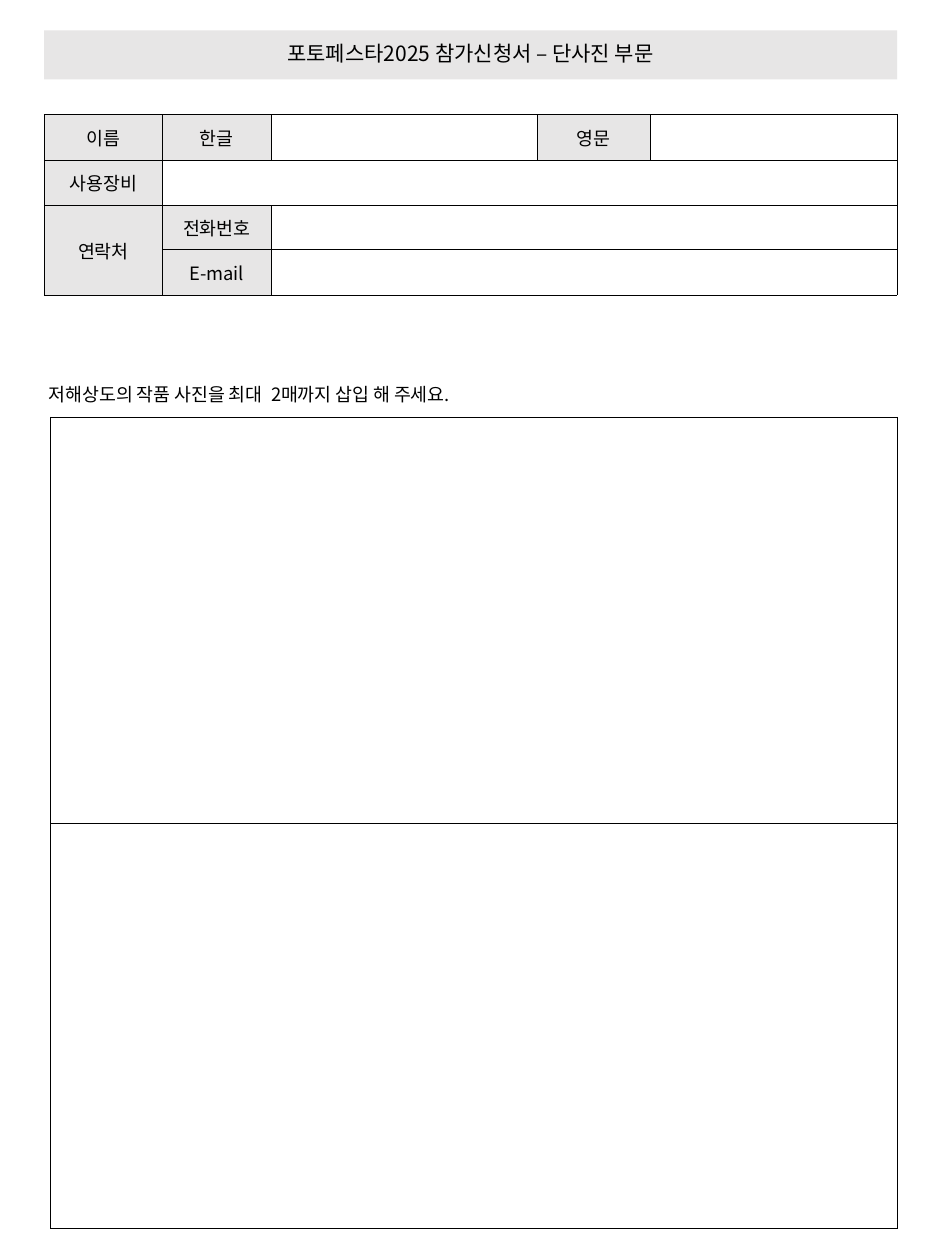
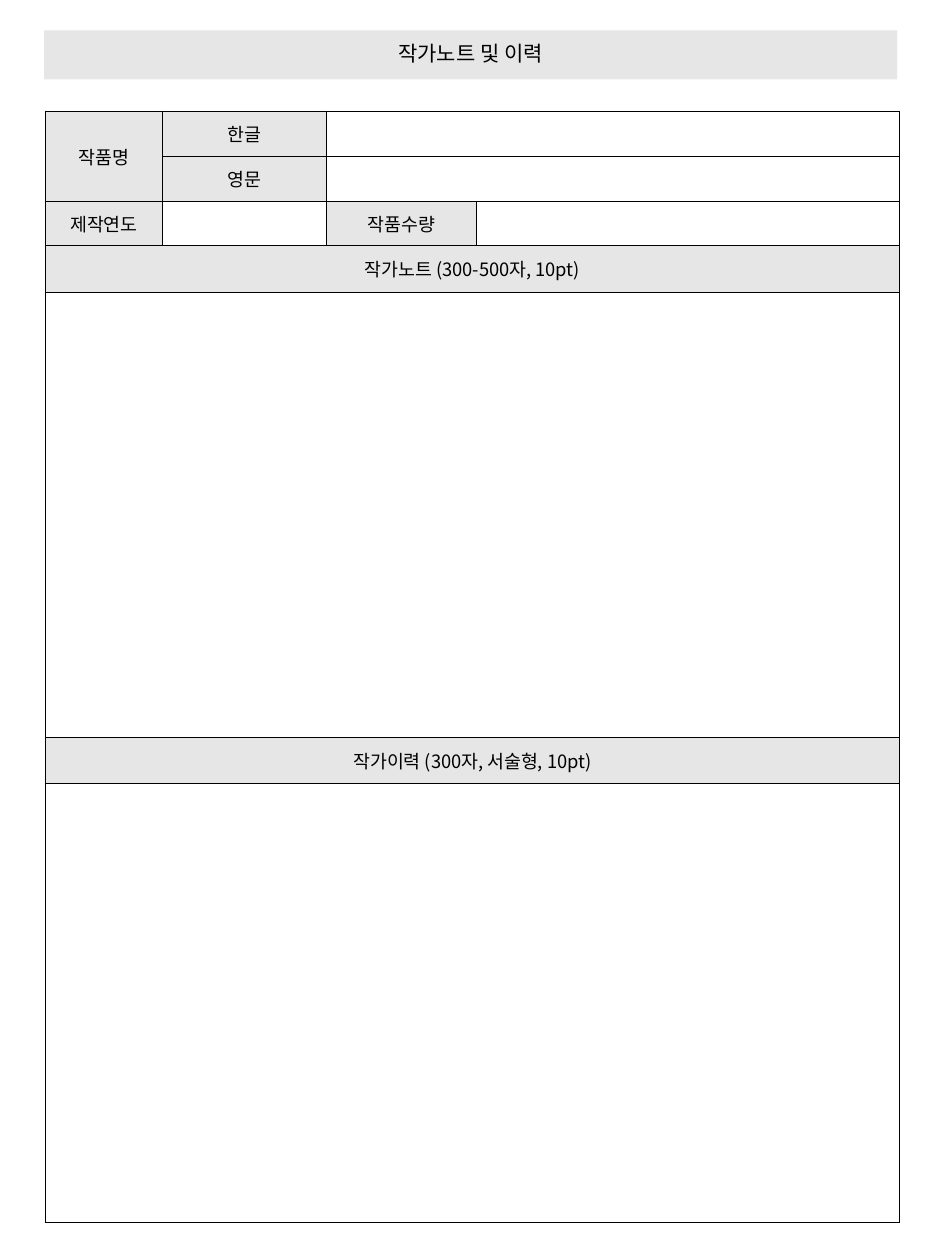
from lxml.etree import SubElement
from pptx import Presentation
from pptx.dml.color import RGBColor
from pptx.enum.text import MSO_ANCHOR, MSO_AUTO_SIZE, PP_ALIGN
from pptx.oxml.ns import qn
from pptx.util import Inches, Pt

FONT = "Noto Sans CJK KR"
BLACK = RGBColor(0x00, 0x00, 0x00)
LABEL_GRAY = RGBColor(0xE7, 0xE6, 0xE6)
TEXT_SIZE, TITLE_SIZE, BORDER_WIDTH = 10.5, 12, 0.25

APPLICANT = {
    "position": (0.35, 0.91),
    "columns": (0.94, 0.86, 2.11, 0.9, 1.96),
    "rows": (0.36, 0.36, 0.35, 0.36),
    "labels": {(0, 0): "이름", (0, 1): "한글", (0, 3): "영문", (1, 0): "사용장비",
               (2, 0): "연락처", (2, 1): "전화번호", (3, 1): "E-mail"},
    "merges": [((1, 1), (1, 4)), ((2, 0), (3, 0)), ((2, 2), (2, 4)), ((3, 2), (3, 4))],
}
PHOTOS = {
    "position": (0.4, 3.31),
    "columns": (6.72,),
    "rows": (3.22, 3.22),
    "labels": {},
    "merges": [],
}
ARTIST = {
    "position": (0.36, 0.88),
    "columns": (0.93, 1.3, 1.19, 3.36),
    "rows": (0.36, 0.36, 0.35, 0.37, 3.53, 0.37, 3.48),
    "labels": {(0, 0): "작품명", (0, 1): "한글", (1, 1): "영문",
               (2, 0): "제작연도", (2, 2): "작품수량",
               (3, 0): "작가노트 (300-500자, 10pt)",
               (5, 0): "작가이력 (300자, 서술형, 10pt)"},
    "merges": [((0, 0), (1, 0)), ((0, 2), (0, 3)), ((1, 2), (1, 3))]
              + [((row, 0), (row, 3)) for row in range(3, 7)],
}
PHOTO_NOTE = "저해상도의 작품 사진을 최대  2매까지 삽입 해 주세요."
SLIDES = [
    ("포토페스타2025 참가신청서 – 단사진 부문", [PHOTOS, APPLICANT], PHOTO_NOTE),
    ("작가노트 및 이력", [ARTIST], None),
]


def write_text(frame, text, size=TEXT_SIZE, align=PP_ALIGN.CENTER, spacing=None):
    """Write one formatted line into a text frame."""
    paragraph = frame.paragraphs[0]
    paragraph.alignment = align
    paragraph.line_spacing = spacing
    run = paragraph.add_run()
    run.text = text
    run.font.size = Pt(size)
    run.font.name = FONT
    run.font.color.rgb = BLACK
    SubElement(run.font._element, qn("a:ea"), typeface=FONT)


def add_title(slide, text):
    """Turn the title placeholder into the gray heading band."""
    title = slide.shapes.title
    title.left, title.top = Inches(0.35), Inches(0.24)
    title.width, title.height = Inches(6.77), Inches(0.39)
    title.fill.solid()
    title.fill.fore_color.rgb = LABEL_GRAY
    frame = title.text_frame
    frame.auto_size = MSO_AUTO_SIZE.NONE
    frame.vertical_anchor = MSO_ANCHOR.MIDDLE
    write_text(frame, text, size=TITLE_SIZE, spacing=0.9)


def add_note(slide, text):
    """Add the instruction line above the photo frames."""
    box = slide.shapes.add_textbox(Inches(0.29), Inches(2.99), Inches(6.83), Inches(0.29))
    box.text_frame.word_wrap = True
    write_text(box.text_frame, text, align=PP_ALIGN.LEFT)


def draw_borders(cell):
    """Give all four sides of a cell a thin black line."""
    properties = cell._tc.get_or_add_tcPr()
    for side in ("lnL", "lnR", "lnT", "lnB"):
        line = SubElement(properties, qn(f"a:{side}"), w=str(Pt(BORDER_WIDTH)))
        fill = SubElement(line, qn("a:solidFill"))
        SubElement(fill, qn("a:srgbClr"), val=str(BLACK))


def format_cell(cell, label):
    """Draw a gray label cell or an empty answer cell."""
    draw_borders(cell)
    cell.vertical_anchor = MSO_ANCHOR.MIDDLE
    if label:
        cell.fill.solid()
        cell.fill.fore_color.rgb = LABEL_GRAY
        write_text(cell.text_frame, label)
    else:
        cell.fill.background()
        paragraph = cell.text_frame.paragraphs[0]
        SubElement(paragraph._p, qn("a:endParaRPr"), sz=str(int(TEXT_SIZE * 100)))


def add_form(slide, form):
    """Add a form table with its labels and merged cells."""
    columns, rows = form["columns"], form["rows"]
    left, top = form["position"]
    table = slide.shapes.add_table(
        len(rows), len(columns), Inches(left), Inches(top),
        Inches(sum(columns)), Inches(sum(rows))).table
    table.first_row = table.horz_banding = False
    for column, width in zip(table.columns, columns):
        column.width = Inches(width)
    for row_index, height in enumerate(rows):
        table.rows[row_index].height = Inches(height)
        for column_index in range(len(columns)):
            label = form["labels"].get((row_index, column_index))
            format_cell(table.cell(row_index, column_index), label)
    for first, last in form["merges"]:
        table.cell(*first).merge(table.cell(*last))


def main():
    """Build the application form."""
    presentation = Presentation()
    presentation.slide_width, presentation.slide_height = Inches(7.5), Inches(10)
    for title, forms, note in SLIDES:
        slide = presentation.slides.add_slide(presentation.slide_layouts[5])
        add_title(slide, title)
        for form in forms:
            add_form(slide, form)
        if note:
            add_note(slide, note)
    presentation.save("out.pptx")


if __name__ == "__main__":
    main()
